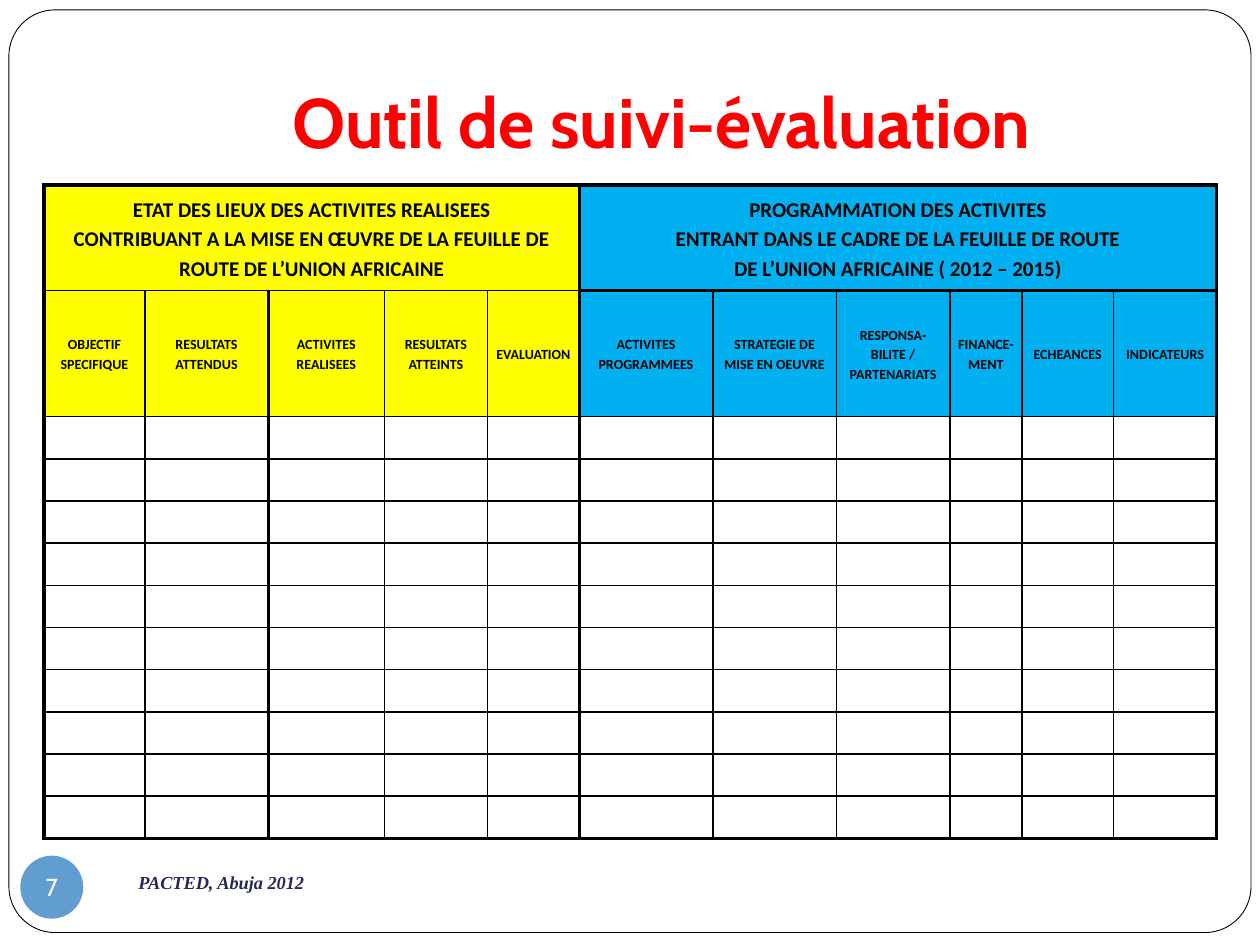
from lxml import etree
from pptx import Presentation, util as u
from pptx.dml.color import RGBColor
from pptx.enum import shapes, text
from pptx.oxml.ns import qn

YELLOW, BLUE, BLACK, WHITE = "FFFF00", "00B0F0", "000000", "FFFFFF"
COLUMNS = [2.03, 2.49, 2.34, 2.08, 1.85, 2.69, 2.49, 2.29, 1.45, 1.85, 2.08]
ROWS = [2.13, 2.54] + [0.85] * 10
SPLIT = 5
HEAVY_COLUMNS = {0, 2, SPLIT, len(COLUMNS)}
GROUPS = [
    (0, SPLIT - 1, ["ETAT DES LIEUX DES ACTIVITES REALISEES",
                    "CONTRIBUANT A LA MISE EN ŒUVRE DE LA FEUILLE DE ROUTE DE L’UNION AFRICAINE"]),
    (SPLIT, len(COLUMNS) - 1, ["PROGRAMMATION DES ACTIVITES",
                               "ENTRANT DANS LE CADRE DE LA FEUILLE DE ROUTE",
                               "DE L’UNION AFRICAINE ( 2012 – 2015)"]),
]
HEADINGS = [
    ["OBJECTIF SPECIFIQUE"], ["RESULTATS", "ATTENDUS"], ["ACTIVITES REALISEES"],
    ["RESULTATS ATTEINTS"], ["EVALUATION"], ["ACTIVITES PROGRAMMEES"],
    ["STRATEGIE DE MISE EN OEUVRE"], ["RESPONSA-", "BILITE / PARTENARIATS"],
    ["FINANCE-MENT"], ["ECHEANCES"], ["INDICATEURS"],
]


def rgb(value):
    """Return the colour for a hex string."""
    return RGBColor.from_string(value)


def set_all(target, values):
    """Set each attribute named in a dict."""
    for name, value in values.items():
        setattr(target, name, value)


def write(tf, lines, size, font, color, align=text.PP_ALIGN.CENTER, spacing=1.0, **style):
    """Write one paragraph per line in a single format."""
    for i, line in enumerate(lines):
        p = tf.add_paragraph() if i else tf.paragraphs[0]
        set_all(p, {"alignment": align, "line_spacing": spacing})
        r = p.add_run()
        r.text = line
        set_all(r.font, {"size": u.Pt(size), "name": font, **style})
        r.font.color.rgb = rgb(color)


def add_shape(s, kind, box, fill, line=None):
    """Add a filled preset shape, outlined if a line colour is given."""
    sp = s.shapes.add_shape(kind, *map(u.Cm, box))
    sp.shadow.inherit = False
    sp.fill.solid()
    sp.fill.fore_color.rgb = rgb(fill)
    if line:
        sp.line.color.rgb = rgb(line)
        sp.line.width = u.Pt(0.5)
    else:
        sp.line.fill.background()
    return sp


def add_text(s, box, lines, anchor, *args, bottom=0.13, **style):
    """Add a wrapping text box."""
    tf = s.shapes.add_textbox(*map(u.Cm, box)).text_frame
    set_all(tf, {"word_wrap": True, "vertical_anchor": anchor, "margin_bottom": u.Cm(bottom)})
    write(tf, lines, *args, **style)


def set_borders(cell, row, col):
    """Draw the cell edges, heavy round the frame and between sections."""
    last = col + (cell.span_width if cell.is_merge_origin else 1)
    heavy = {
        "lnL": col in HEAVY_COLUMNS,
        "lnR": last in HEAVY_COLUMNS,
        "lnT": row == 0 or (row == 1 and col >= SPLIT),
        "lnB": row == len(ROWS) - 1 or (row == 0 and col >= SPLIT),
    }
    tc_pr = cell._tc.get_or_add_tcPr()
    for tag, thick in heavy.items():
        ln = etree.SubElement(tc_pr, qn("a:" + tag), w=str(u.Pt(2.25 if thick else 1)))
        fill = etree.SubElement(ln, qn("a:solidFill"))
        etree.SubElement(fill, qn("a:srgbClr"), val=BLACK)


def format_cell(cell, row, col):
    """Set margins, borders and fill of one cell."""
    set_all(cell, {"margin_left": u.Cm(0.15), "margin_right": u.Cm(0.15),
                   "margin_top": 0, "margin_bottom": 0,
                   "vertical_anchor": text.MSO_ANCHOR.MIDDLE})
    set_borders(cell, row, col)
    if row < 2:
        cell.fill.solid()
        cell.fill.fore_color.rgb = rgb(YELLOW if col < SPLIT else BLUE)
    else:
        cell.fill.background()
        cell.text_frame.paragraphs[0].font.size = u.Pt(8)


def add_grid(s):
    """Add the monitoring table with its two header rows."""
    table = s.shapes.add_table(len(ROWS), len(COLUMNS), u.Cm(0.89), u.Cm(3.73),
                               u.Cm(sum(COLUMNS)), u.Cm(sum(ROWS))).table
    set_all(table, {"first_row": False, "horz_banding": False})
    for column, width in zip(table.columns, COLUMNS):
        column.width = u.Cm(width)
    for row, height in zip(table.rows, ROWS):
        row.height = u.Cm(height)
    for first, last, lines in GROUPS:
        table.cell(0, first).merge(table.cell(0, last))
        write(table.cell(0, first).text_frame, lines, 12, "Calibri", BLACK, spacing=1.15, bold=True)
    for col, lines in enumerate(HEADINGS):
        write(table.cell(1, col).text_frame, lines, 8, "Calibri", BLACK, spacing=1.15, bold=True)
    for row in range(len(ROWS)):
        for col in range(len(COLUMNS)):
            cell = table.cell(row, col)
            if not cell.is_spanned:
                format_cell(cell, row, col)


def add_number(s, number):
    """Add the slide number in its disc."""
    sp = add_shape(s, shapes.MSO_SHAPE.OVAL, (0.41, 17.25, 1.27, 1.27), "629DD1")
    tf = sp.text_frame
    set_all(tf, {"word_wrap": False, "vertical_anchor": text.MSO_ANCHOR.MIDDLE,
                 "margin_left": 0, "margin_right": 0, "margin_top": 0, "margin_bottom": 0})
    write(tf, [number], 14, "Cabin", WHITE)


def main():
    """Build the slide and save it."""
    prs = Presentation()
    set_all(prs, {"slide_width": u.Cm(25.4), "slide_height": u.Cm(19.05)})
    s = prs.slides.add_slide(prs.slide_layouts[6])
    frame = add_shape(s, shapes.MSO_SHAPE.ROUNDED_RECTANGLE, (0.18, 0.2, 25.04, 18.6), WHITE, BLACK)
    frame.adjustments[0] = 0.05
    add_text(s, (2.54, 0.76, 21.59, 2.77), ["Outil de suivi-évaluation"], text.MSO_ANCHOR.BOTTOM,
             40, "Cabin", "FF0000", bottom=0.25, bold=True)
    add_text(s, (2.54, 17.15, 11, 1.27), ["PACTED, Abuja 2012"], text.MSO_ANCHOR.MIDDLE,
             10.5, "Times New Roman", "242852", align=text.PP_ALIGN.LEFT, bold=True, italic=True)
    add_number(s, "7")
    add_grid(s)
    prs.save("out.pptx")


if __name__ == "__main__":
    main()
